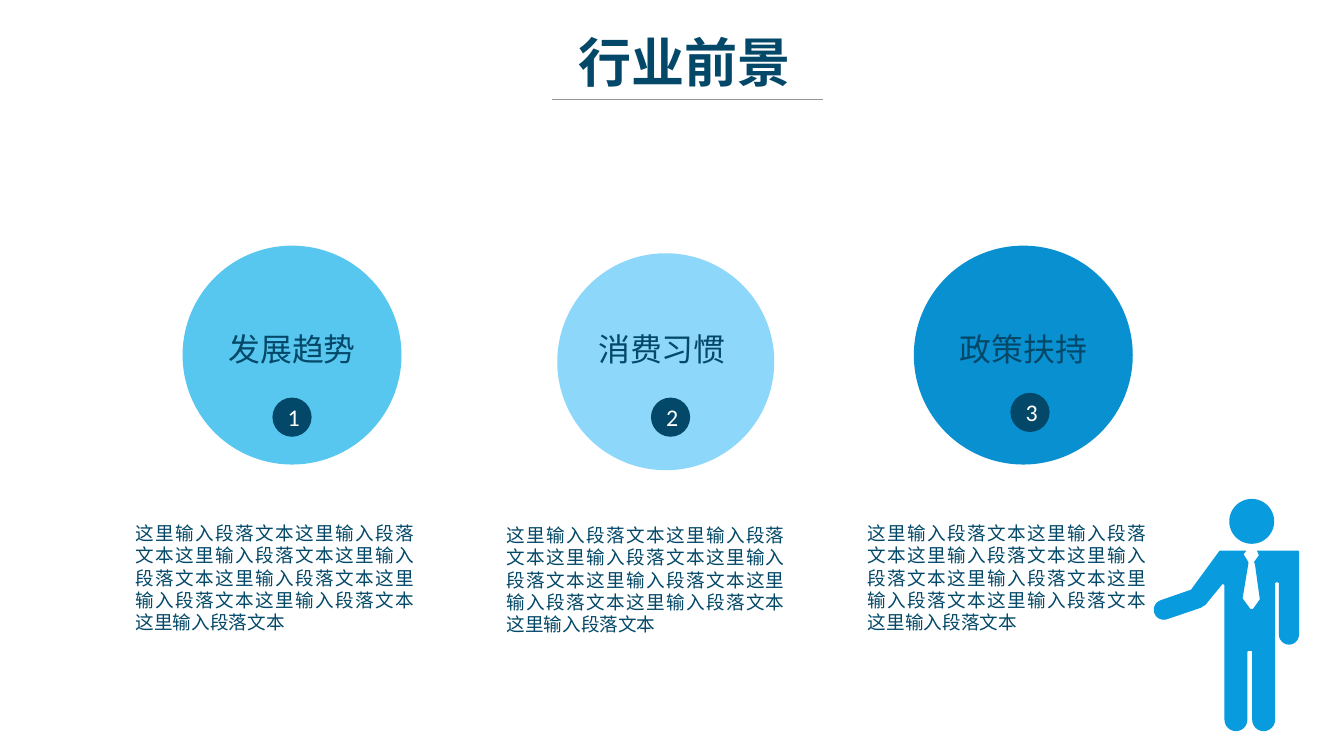
import math
import pptx
import pptx.util
import pptx.dml.color
import pptx.enum.shapes
import pptx.enum.text
import pptx.oxml
import pptx.oxml.ns

Inches = pptx.util.Inches
RGBColor = pptx.dml.color.RGBColor
PRESET = pptx.enum.shapes.MSO_SHAPE
ALIGN = pptx.enum.text.PP_ALIGN
AUTO_SIZE = pptx.enum.text.MSO_AUTO_SIZE

NAVY = RGBColor(0x03, 0x48, 0x68)
WHITE = RGBColor(0xFF, 0xFF, 0xFF)
GREY = RGBColor(0x96, 0x96, 0x96)
SKY = RGBColor(0x57, 0xC7, 0xEF)
PALE = RGBColor(0x8D, 0xD7, 0xFA)
BLUE = RGBColor(0x08, 0x90, 0xD0)
FIGURE_BLUE = RGBColor(0x08, 0x9C, 0xDE)
CJK = "Noto Sans CJK SC"

# Content: positions are (left, top); circles are (left, top, diameter)
TITLE = "行业前景"
BODY = "这里输入段落文本" * 8
TOPICS = [
    dict(heading="发展趋势", color=SKY, circle=(1.91, 2.57, 2.29), badge=(2.85, 4.16),
         label=(2.29, 3.4), body=(1.35, 5.42)),
    dict(heading="消费习惯", color=PALE, circle=(5.83, 2.65, 2.27), badge=(6.81, 4.16),
         label=(6.16, 3.4), body=(5.23, 5.44)),
    dict(heading="政策扶持", color=BLUE, circle=(9.56, 2.57, 2.29), badge=(10.57, 4.11),
         label=(9.94, 3.4), body=(9.01, 5.42)),
]
RIM = 0.05
BADGE_SIZE = 0.41
LABEL_SIZE = (1.75, 0.51)
BODY_SIZE = (3.05, 1.25)


def arc(x, y, radius, start=0):
    """Half circle, clockwise on the slide from the start angle in degrees."""
    angles = [math.radians(start + step) for step in range(0, 181, 15)]
    return [(x + radius * math.cos(a), y + radius * math.sin(a)) for a in angles]


# Standing man: collar and tie, arm, two legs, pointing hand
MAN = [
    (12.76, 5.76), (13.04, 5.76), (13.01, 5.8), (13.06, 5.88), (13.06, 5.9),
    (13, 6.26), (13.08, 6.37), (13.11, 6.37), (13.18, 6.27), (13.13, 5.91),
    (13.12, 5.88), (13.17, 5.81), (13.15, 5.76), (13.58, 5.76), (13.59, 5.77),
    *arc(13.485, 6.64, 0.105), (13.38, 6.1), (13.36, 6.09), (13.34, 6.1),
    *arc(13.22, 7.53, 0.12), (13.1, 6.82), (13.09, 6.81), (13.06, 6.81), (13.05, 6.82),
    *arc(12.93, 7.53, 0.12), (12.81, 6.12), (12.79, 6.11), (12.61, 6.33), (12.56, 6.36),
    *arc(12.175, 6.38, 0.105, start=72), (12.46, 6.17),
]

deck = pptx.Presentation()
deck.slide_width, deck.slide_height = Inches(14.06), Inches(7.91)
slide = deck.slides.add_slide(deck.slide_layouts[6])
shapes = slide.shapes


def write(frame, text, size, color=NAVY, font=CJK, bold=False, align=ALIGN.LEFT):
    paragraph = frame.paragraphs[0]
    paragraph.alignment = align
    run = paragraph.add_run()
    run.text = text
    run.font.size = pptx.util.Pt(size)
    run.font.bold = bold
    run.font.color.rgb = color
    run.font.name = font
    east_asian = pptx.oxml.parse_xml(
        f'<a:ea {pptx.oxml.ns.nsdecls("a")} typeface="{font}"/>')
    run.font._element.append(east_asian)


def text_box(left, top, width, height, wrap=True):
    frame = shapes.add_textbox(*map(Inches, (left, top, width, height))).text_frame
    frame.word_wrap = wrap
    frame.auto_size = AUTO_SIZE.SHAPE_TO_FIT_TEXT
    return frame


def paint(shape, color):
    shape.fill.solid()
    shape.fill.fore_color.rgb = color
    shape.line.fill.background()
    shape.shadow.inherit = False
    return shape


def round_shape(preset, left, top, size, color):
    return paint(shapes.add_shape(preset, *map(Inches, (left, top, size, size))), color)


# Title and its rule
write(text_box(5.92, 0.26, 2.45, 0.77, wrap=False), TITLE, 40, bold=True, align=ALIGN.RIGHT)
rule = shapes.add_connector(pptx.enum.shapes.MSO_CONNECTOR.STRAIGHT,
                            *map(Inches, (5.77, 1.04, 8.61, 1.04)))
rule.line.color.rgb = GREY
rule.line.width = pptx.util.Pt(0.75)
rule._element.spPr.append(
    pptx.oxml.parse_xml(f'<a:effectLst {pptx.oxml.ns.nsdecls("a")}/>'))

# Man
outline = [(Inches(x), Inches(y)) for x, y in MAN]
builder = shapes.build_freeform(*outline[0])
builder.add_line_segments(outline[1:], close=True)
paint(builder.convert_to_shape(), FIGURE_BLUE)
round_shape(PRESET.OVAL, 12.86, 5.22, 0.47, FIGURE_BLUE)

# Topics: ring, disc, numbered badge, heading and paragraph
for number, topic in enumerate(TOPICS, start=1):
    left, top, size = topic["circle"]
    ring = round_shape(PRESET.DONUT, left, top, size, topic["color"])
    ring.adjustments[0] = RIM
    round_shape(PRESET.OVAL, left + RIM, top + RIM, size - 2 * RIM, topic["color"])

    badge = round_shape(PRESET.OVAL, *topic["badge"], BADGE_SIZE, NAVY)
    badge.text_frame.vertical_anchor = pptx.enum.text.MSO_ANCHOR.MIDDLE
    write(badge.text_frame, str(number), 18, color=WHITE, font="Calibri", align=ALIGN.CENTER)

    write(text_box(*topic["label"], *LABEL_SIZE), topic["heading"], 24)

    body = text_box(*topic["body"], *BODY_SIZE)
    body.margin_left = body.margin_right = Inches(0.07)
    body.margin_top = body.margin_bottom = Inches(0.04)
    write(body, BODY, 14, align=ALIGN.JUSTIFY)

deck.save("out.pptx")
